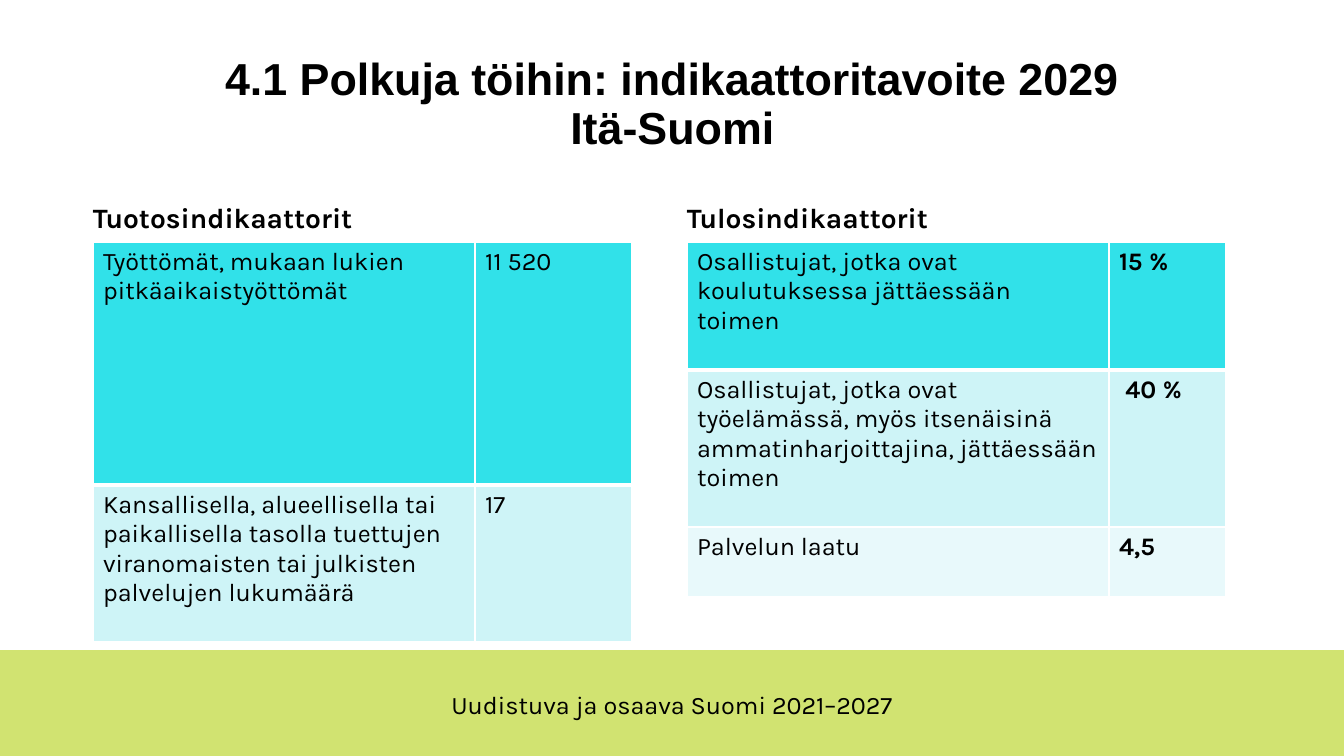
"""Build the Itä-Suomi indicator target slide."""
from dataclasses import dataclass

from lxml.etree import SubElement
from pptx import Presentation
from pptx.dml.color import RGBColor
from pptx.enum.shapes import MSO_SHAPE
from pptx.enum.text import MSO_ANCHOR, MSO_AUTO_SIZE, PP_ALIGN
from pptx.oxml.ns import qn
from pptx.util import Emu, Pt

EMU_PER_PX = 914400 / 100.8
COLORS = {
    "text": "000000",
    "border": "FFFFFF",
    "band": "D1E371",
    "row_0": "31E1E9",
    "row_1": "CEF4F7",
    "row_2": "E8F9FB",
}
HEADING_TOP, HEADING_HEIGHT = 194, 40
TABLE_TOP = 242


@dataclass(frozen=True)
class Box:
    left: int
    top: int
    width: int
    height: int


@dataclass(frozen=True)
class IndicatorGroup:
    heading: str
    placeholder_idx: int
    left: int
    column_widths: tuple[int, int]
    row_heights: tuple[int, ...]
    targets: tuple[tuple[str, str], ...]
    bold_values: bool


GROUPS = (
    IndicatorGroup(
        "Tuotosindikaattorit", 1, 93, (382, 157), (243, 157),
        (
            ("Työttömät, mukaan lukien pitkäaikaistyöttömät", "11 520"),
            ("Kansallisella, alueellisella tai paikallisella tasolla tuettujen "
             "viranomaisten tai julkisten palvelujen lukumäärä", "17"),
        ),
        False,
    ),
    IndicatorGroup(
        "Tulosindikaattorit", 3, 687, (422, 117), (128, 157, 70),
        (
            ("Osallistujat, jotka ovat koulutuksessa jättäessään toimen", "15 %"),
            ("Osallistujat, jotka ovat työelämässä, myös itsenäisinä "
             "ammatinharjoittajina, jättäessään toimen", " 40 %"),
            ("Palvelun laatu", "4,5"),
        ),
        True,
    ),
)


def px(length: int) -> Emu:
    return Emu(round(length * EMU_PER_PX))


def color(name: str) -> RGBColor:
    return RGBColor.from_string(COLORS[name])


def place(shape, box: Box) -> None:
    shape.left, shape.top = px(box.left), px(box.top)
    shape.width, shape.height = px(box.width), px(box.height)


def write(frame, text: str, size: int, font: str = "Karla", bold: bool = False,
          align: PP_ALIGN = PP_ALIGN.LEFT, line_spacing: float = 1.0) -> None:
    paragraph = frame.paragraphs[0]
    paragraph.text = text
    paragraph.alignment = align
    paragraph.line_spacing = line_spacing
    paragraph.space_before = Pt(0)
    for run in paragraph.runs:
        run.font.name = font
        run.font.size = Pt(size)
        run.font.bold = bold
        run.font.color.rgb = color("text")


def set_frame(frame, anchor: MSO_ANCHOR) -> None:
    frame.word_wrap = True
    frame.auto_size = MSO_AUTO_SIZE.NONE
    frame.vertical_anchor = anchor
    frame.margin_left = frame.margin_right = 0
    frame.margin_top = frame.margin_bottom = 0


def add_border(cell, side: str, points: int) -> None:
    line = SubElement(cell._tc.get_or_add_tcPr(), qn(f"a:ln{side}"), w=str(Pt(points)))
    fill = SubElement(line, qn("a:solidFill"))
    SubElement(fill, qn("a:srgbClr"), val=COLORS["border"])


def add_footer(slide) -> None:
    band = slide.shapes.add_shape(MSO_SHAPE.RECTANGLE, 0, px(650), px(1344), px(106))
    band.shadow.inherit = False
    band.fill.solid()
    band.fill.fore_color.rgb = color("band")
    band.line.fill.background()
    programme = slide.shapes.add_textbox(px(328), px(689), px(688), px(30))
    set_frame(programme.text_frame, MSO_ANCHOR.MIDDLE)
    write(programme.text_frame, "Uudistuva ja osaava Suomi 2021–2027", 18,
          align=PP_ALIGN.CENTER)


def add_title(slide) -> None:
    title = slide.shapes.title
    place(title, Box(93, 40, 1159, 114))
    set_frame(title.text_frame, MSO_ANCHOR.BOTTOM)
    write(title.text_frame, "4.1 Polkuja töihin: indikaattoritavoite 2029\vItä-Suomi",
          32, "Arial", True, PP_ALIGN.CENTER, 0.9)


def add_group(slide, group: IndicatorGroup) -> None:
    width = sum(group.column_widths)
    heading = next(holder for holder in slide.placeholders
                   if holder.placeholder_format.idx == group.placeholder_idx)
    place(heading, Box(group.left, HEADING_TOP, width, HEADING_HEIGHT))
    set_frame(heading.text_frame, MSO_ANCHOR.BOTTOM)
    write(heading.text_frame, group.heading, 20, bold=True)

    table = slide.shapes.add_table(
        len(group.targets), len(group.column_widths), px(group.left), px(TABLE_TOP),
        px(width), px(sum(group.row_heights))).table
    table.first_row = table.horz_banding = False
    for column, column_width in zip(table.columns, group.column_widths):
        column.width = px(column_width)
    for row_number, target in enumerate(group.targets):
        table.rows[row_number].height = px(group.row_heights[row_number])
        for column_number, text in enumerate(target):
            cell = table.cell(row_number, column_number)
            write(cell.text_frame, text, 18,
                  bold=group.bold_values and column_number == 1)
            add_border(cell, "L", 1)
            add_border(cell, "R", 1)
            add_border(cell, "T", 3 if row_number == 1 else 1)
            add_border(cell, "B", 3 if row_number == 0 else 1)
            cell.fill.solid()
            cell.fill.fore_color.rgb = color(f"row_{row_number}")


def main() -> None:
    deck = Presentation()
    deck.slide_width, deck.slide_height = px(1344), px(756)
    slide = deck.slides.add_slide(deck.slide_layouts.get_by_name("Comparison"))
    add_footer(slide)
    add_title(slide)
    for group in GROUPS:
        add_group(slide, group)
    for holder in list(slide.placeholders):
        if not holder.text_frame.text:
            holder.element.getparent().remove(holder.element)
    deck.save("out.pptx")


if __name__ == "__main__":
    main()
